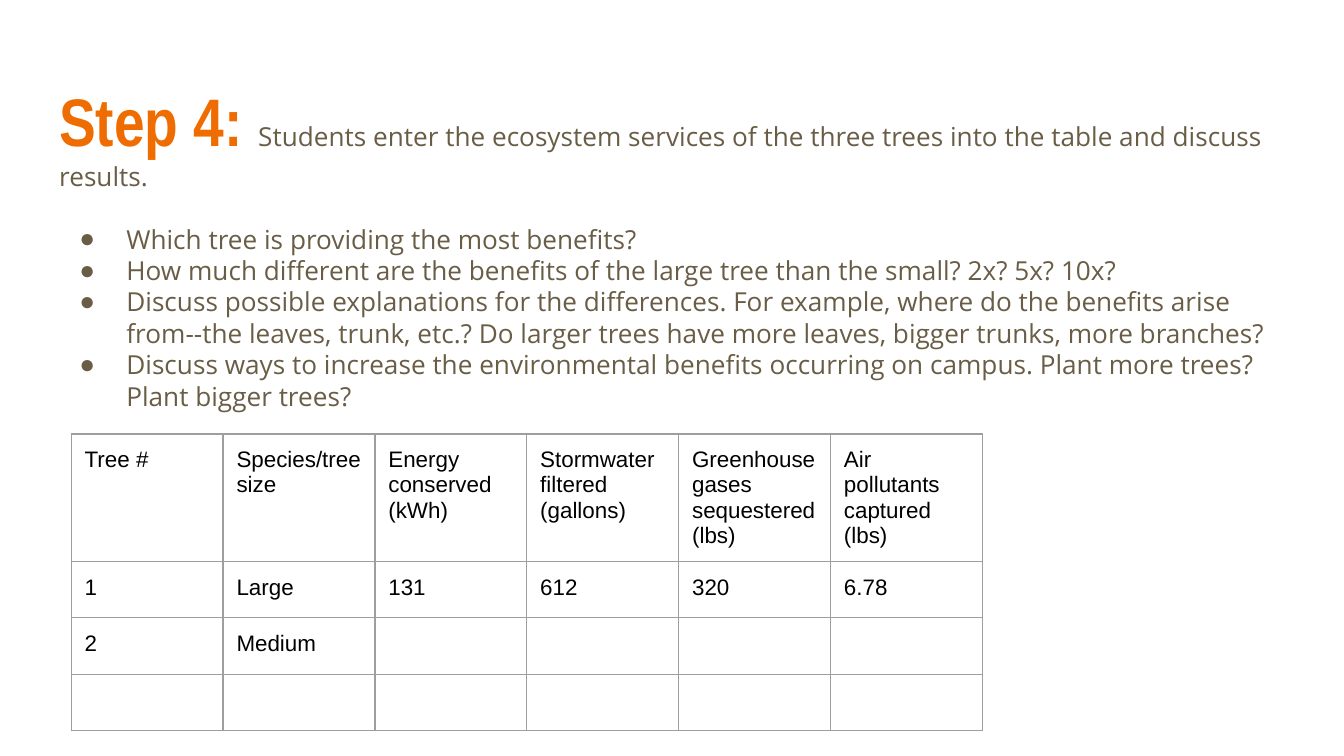
from pptx import Presentation
from pptx.dml.color import RGBColor
from pptx.enum.text import MSO_ANCHOR, MSO_AUTO_SIZE, PP_ALIGN
from pptx.oxml.ns import qn
from pptx.util import Inches, Pt
from lxml.etree import SubElement

ORANGE, BROWN, BLACK, GRAY = "EF6C00", "695D46", "000000", "9E9E9E"
INSET = Inches(0.1)

INTRODUCTION = "Students enter the ecosystem services of the three trees into the table and discuss results."
QUESTIONS = [
    "Which tree is providing the most benefits?",
    "How much different are the benefits of the large tree than the small? 2x? 5x? 10x?",
    "Discuss possible explanations for the differences. For example, where do the benefits arise "
    "from--the leaves, trunk, etc.? Do larger trees have more leaves, bigger trunks, more branches?",
    "Discuss ways to increase the environmental benefits occurring on campus. "
    "Plant more trees? Plant bigger trees?",
]
TREE_ROWS = [
    ["Tree #", "Species/tree size", "Energy conserved (kWh)", "Stormwater filtered (gallons)",
     "Greenhouse gases sequestered (lbs)", "Air pollutants captured (lbs)"],
    ["1", "Large", "131", "612", "320", "6.78"],
    ["2", "Medium", "", "", "", ""],
    [""] * 6,
]


def color(value):
    return RGBColor.from_string(value)


def format_font(font, name, size, value, bold=False):
    font.name = name
    font.size = Pt(size)
    font.bold = bold
    font.color.rgb = color(value)


def add_bullet(paragraph):
    properties = paragraph._p.get_or_add_pPr()
    properties.set("marL", str(Inches(0.5)))
    properties.set("indent", str(Inches(-0.35)))
    bullet_color = SubElement(properties, qn("a:buClr"))
    SubElement(bullet_color, qn("a:srgbClr"), val=BROWN)
    SubElement(properties, qn("a:buFont"), typeface="Arial")
    SubElement(properties, qn("a:buChar"), char="●")


def fill_instructions(shape, left, top, width, height):
    shape.left, shape.top, shape.width, shape.height = left, top, width, height
    frame = shape.text_frame
    frame.word_wrap = True
    frame.auto_size = MSO_AUTO_SIZE.NONE
    frame.vertical_anchor = MSO_ANCHOR.TOP
    frame.margin_left = frame.margin_right = frame.margin_top = frame.margin_bottom = INSET

    heading = frame.paragraphs[0]
    for text, style in [("Step 4: ", ("Arial Narrow", 36, ORANGE, True)),
                        (INTRODUCTION, ("Open Sans", 14, BROWN))]:
        run = heading.add_run()
        run.text = text
        format_font(run.font, *style)

    for index, question in enumerate(QUESTIONS):
        paragraph = frame.add_paragraph()
        paragraph.text = question
        paragraph.space_before = Pt(0 if index else 17)
        add_bullet(paragraph)
        format_font(paragraph.runs[0].font, "Open Sans", 14, BROWN)

    for paragraph in frame.paragraphs:
        paragraph.alignment = PP_ALIGN.LEFT
        paragraph.line_spacing = 1.0


def add_borders(cell):
    properties = cell._tc.get_or_add_tcPr()
    for position, side in enumerate(["a:lnL", "a:lnR", "a:lnT", "a:lnB"]):
        line = properties.makeelement(qn(side), {"w": str(Pt(0.75))})
        fill = SubElement(line, qn("a:solidFill"))
        SubElement(fill, qn("a:srgbClr"), val=GRAY)
        properties.insert(position, line)


def format_cell(cell, text):
    cell.text = text
    cell.fill.background()
    cell.margin_left = cell.margin_right = cell.margin_top = cell.margin_bottom = INSET
    add_borders(cell)
    paragraph = cell.text_frame.paragraphs[0]
    for run in paragraph.runs:
        format_font(run.font, "Arial", 12, BLACK)
    if not text:
        SubElement(paragraph._p, qn("a:endParaRPr"), sz="1200")


def add_tree_table(slide, left, top, column_width, row_height):
    row_count, column_count = len(TREE_ROWS), len(TREE_ROWS[0])
    table = slide.shapes.add_table(row_count, column_count, left, top,
                                   column_width * column_count, row_height * row_count).table
    table.first_row = table.horz_banding = False
    for row, texts in zip(table.rows, TREE_ROWS):
        row.height = row_height
        for cell, text in zip(row.cells, texts):
            format_cell(cell, text)


def main():
    presentation = Presentation()
    presentation.slide_width = Inches(10)
    presentation.slide_height = presentation.slide_width * 9 // 16
    slide = presentation.slides.add_slide(presentation.slide_layouts[5])
    fill_instructions(slide.shapes.title, Inches(0.34), Inches(0.49), Inches(9.32), Inches(1.03))
    add_tree_table(slide, Inches(0.53), Inches(3.23), Inches(1.13), Inches(0.42))
    presentation.save("out.pptx")


if __name__ == "__main__":
    main()
